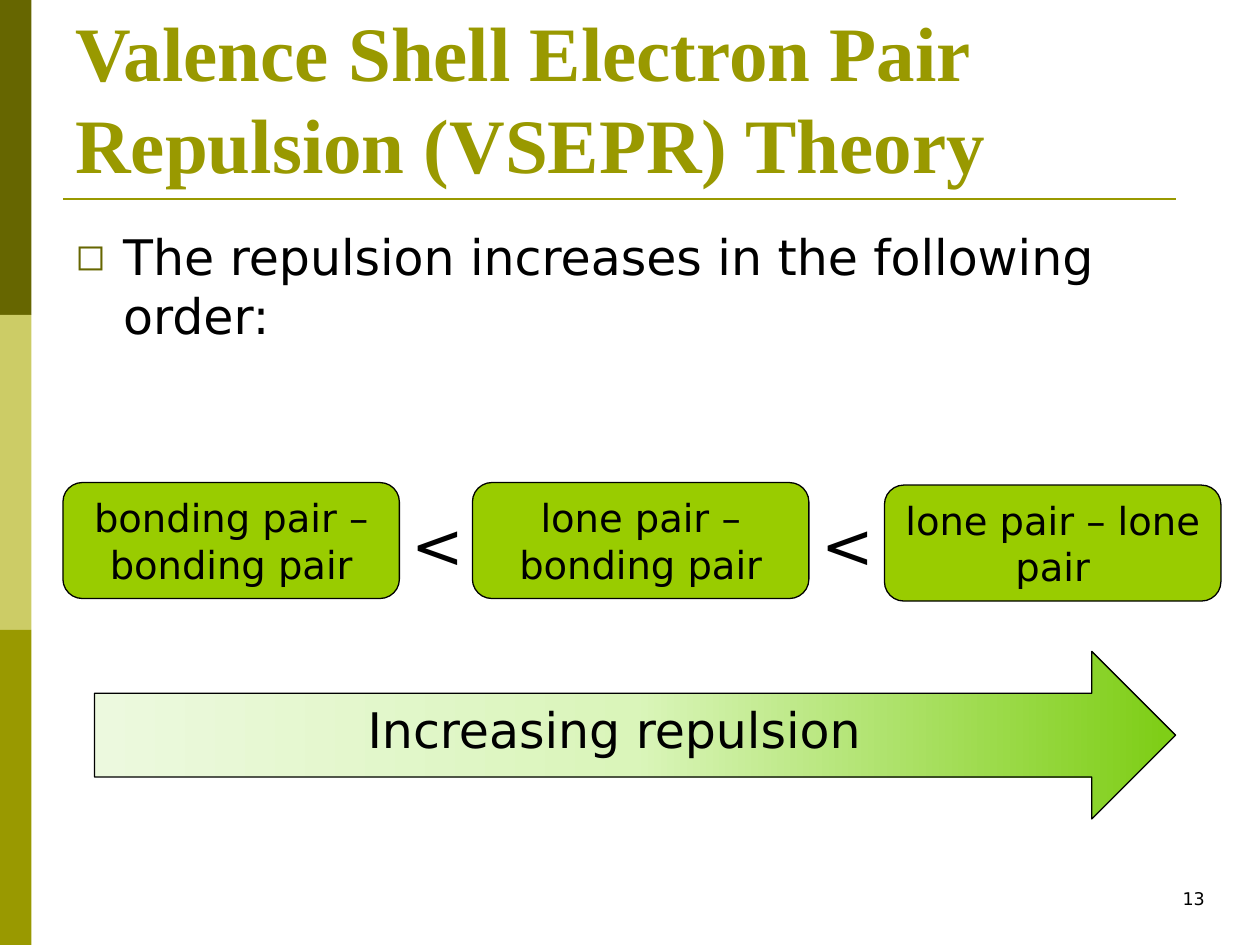
from copy import deepcopy

from pptx import Presentation
from pptx.dml.color import RGBColor
from pptx.enum.shapes import MSO_CONNECTOR, MSO_SHAPE
from pptx.enum.text import MSO_ANCHOR, PP_ALIGN
from pptx.oxml.ns import qn
from pptx.util import Inches, Pt
from lxml import etree

RECT = MSO_SHAPE.RECTANGLE
ROUND = MSO_SHAPE.ROUNDED_RECTANGLE
ARROW = MSO_SHAPE.RIGHT_ARROW
STRAIGHT = MSO_CONNECTOR.STRAIGHT
TOP, BOTTOM = MSO_ANCHOR.TOP, MSO_ANCHOR.BOTTOM
LEFT, CENTER, RIGHT = PP_ALIGN.LEFT, PP_ALIGN.CENTER, PP_ALIGN.RIGHT
SANS, SERIF = "DejaVu Sans", "Times New Roman"
BLACK, DARK, OLIVE, PALE, GREEN = "000000", "666600", "999900", "CCCC66", "99CC00"


def paint(code):
    """Return the colour for a hex string."""
    return RGBColor.from_string(code)


def write(shape, text, size=28, face=SANS, color=BLACK, bold=False,
          align=LEFT, anchor=TOP, bullet=None):
    """Put formatted text in a shape, with an optional bullet."""
    frame = shape.text_frame
    frame.word_wrap = True
    frame.vertical_anchor = anchor
    para = frame.paragraphs[0]
    para.text = text
    para.alignment = align
    if bullet:
        props = para._p.get_or_add_pPr()
        props.set("marL", str(Inches(0.38)))
        props.set("indent", str(-Inches(0.38)))
        tint = etree.SubElement(props, qn("a:buClr"))
        etree.SubElement(tint, qn("a:srgbClr"), val=DARK)
        etree.SubElement(props, qn("a:buSzPct"), val="75000")
        etree.SubElement(props, qn("a:buFont"), typeface=SANS)
        etree.SubElement(props, qn("a:buChar"), char=bullet)
    font = para.runs[0].font
    font.size, font.name, font.bold = Pt(size), face, bold
    font.color.rgb = paint(color)


def label(slide, box, text, **style):
    """Add a text box."""
    shape = slide.shapes.add_textbox(*map(Inches, box))
    write(shape, text, **style)


def block(slide, kind, box, fill=None, edge=None):
    """Add a flat shape with an optional fill and outline."""
    shape = slide.shapes.add_shape(kind, *map(Inches, box))
    shape.shadow.inherit = False
    if fill:
        shape.fill.solid()
        shape.fill.fore_color.rgb = paint(fill)
    if edge:
        shape.line.color.rgb = paint(edge)
        shape.line.width = Pt(0.75)
    else:
        shape.line.fill.background()
    return shape


def side(slide, box):
    """Stack three colour bands down the box."""
    left, top, width, height = box
    step = height / 3
    for row, color in enumerate((DARK, PALE, OLIVE)):
        block(slide, RECT, (left, top + row * step, width, step), color)


def header(slide, box):
    """Place the title with a rule below it."""
    left, top, width, height = box
    label(slide, box, "Valence Shell Electron Pair Repulsion (VSEPR) Theory",
          size=44, face=SERIF, color=OLIVE, bold=True, anchor=BOTTOM)
    level = Inches(top + height + 0.03)
    rule = slide.shapes.add_connector(
        STRAIGHT, Inches(left), level, Inches(left + width - 0.17), level)
    rule.line.color.rgb = paint(OLIVE)
    rule.line.width = Pt(1.5)
    etree.SubElement(rule._element.spPr, qn("a:effectLst"))


def order(slide, box):
    """Place the three pair cards with less-than signs between them."""
    left, top, width, height = box
    wide = 2.67
    cards = (
        (0, 0, "bonding pair – bonding pair"),
        (3.25, 0, "lone pair – bonding pair"),
        (width - wide, 0.02, "lone pair – lone pair"),
    )
    for across, down, text in cards:
        card = block(slide, ROUND, (left + across, top + down, wide, height),
                     GREEN, BLACK)
        write(card, text, size=22, align=CENTER)
    for across, down, text in cards[:2]:
        label(slide, (left + across + wide, top + 0.13, 0.83, 0.71), "<", size=36)


def trend(slide, box):
    """Place the arrow that shades from pale to strong green."""
    arrow = block(slide, ARROW, box, edge=BLACK)
    fill = arrow.fill
    fill.gradient()
    fill.gradient_angle = 0
    stops = arrow._element.spPr.find(qn("a:gradFill")).find(qn("a:gsLst"))
    stops.append(deepcopy(stops[0]))
    shades = ((0, "ECF9DE"), (0.5, "DAF5BA"), (0.99, "7FCE17"))
    for stop, (place, color) in zip(fill.gradient_stops, shades):
        stop.position = place
        stop.color.rgb = paint(color)
    write(arrow, "Increasing repulsion", align=CENTER)


def main():
    """Build and save the slide."""
    deck = Presentation()
    deck.slide_width, deck.slide_height = Inches(10), Inches(7.5)
    slide = deck.slides.add_slide(deck.slide_layouts[6])
    side(slide, (0, 0, 0.25, 7.5))
    header(slide, (0.5, 0.3, 9, 1.25))
    label(slide, (0.5, 1.75, 9, 5.5),
          "The repulsion increases in the following order:", bullet="◻")
    label(slide, (7.33, 7, 2.33, 0.5), "13", size=10, align=RIGHT)
    order(slide, (0.5, 3.83, 9.19, 0.92))
    trend(slide, (0.75, 5.17, 8.58, 1.33))
    deck.save("out.pptx")


if __name__ == "__main__":
    main()
